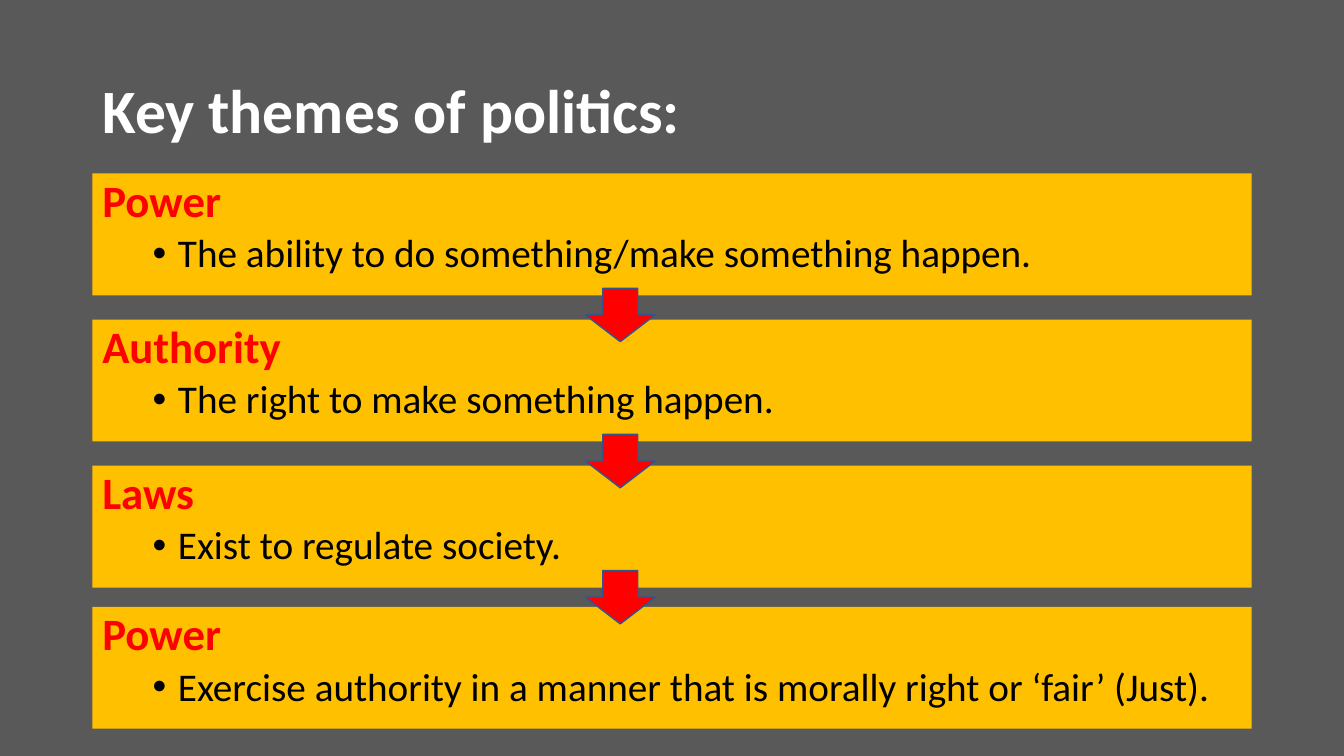
from dataclasses import dataclass

from lxml.etree import SubElement
from pptx import Presentation
from pptx.dml.color import RGBColor
from pptx.enum.shapes import MSO_SHAPE
from pptx.enum.text import MSO_ANCHOR, MSO_AUTO_SIZE, PP_ALIGN
from pptx.oxml.ns import qn
from pptx.shapes.autoshape import Shape
from pptx.slide import Slide
from pptx.text.text import TextFrame
from pptx.util import Inches, Pt

GREY = RGBColor(0x59, 0x59, 0x59)
GOLD = RGBColor(0xFF, 0xC0, 0x00)
RED = RGBColor(0xFF, 0x00, 0x00)
BLUE = RGBColor(0x32, 0x54, 0x91)
WHITE = RGBColor(0xFF, 0xFF, 0xFF)
BLACK = RGBColor(0x00, 0x00, 0x00)

FONT = "Calibri"
PAGE_WIDTH = Inches(13.33)
PAGE_HEIGHT = Inches(7.5)
COLUMN = PAGE_WIDTH / 160
ROW = PAGE_HEIGHT / 150


@dataclass(frozen=True)
class Area:
    """A rectangle in grid columns and rows."""
    left: float
    top: float
    width: float
    height: float

    def lengths(self) -> tuple[int, int, int, int]:
        return (round(self.left * COLUMN), round(self.top * ROW),
                round(self.width * COLUMN), round(self.height * ROW))


@dataclass(frozen=True)
class Theme:
    name: str
    meaning: str
    top: float


TITLE_AREA = Area(11, 8, 138, 29)
THEMES = (
    Theme("Power", "The ability to do something/make something happen.", 34.4),
    Theme("Authority", "The right to make something happen.", 63.4),
    Theme("Laws", "Exist to regulate society.", 92.4),
    Theme("Power", "Exercise authority in a manner that is morally right "
          "or ‘fair’ (Just).", 120.4),
)
ARROW_TOPS = (57.2, 86.2, 113.2)


def write_paragraph(frame: TextFrame, text: str, *, size: float,
                    color: RGBColor, bold: bool = False, before: float = 0,
                    bullet: bool = False) -> None:
    """Fill the frame's empty first paragraph, or add one after its text."""
    para = frame.add_paragraph() if frame.text else frame.paragraphs[0]
    para.alignment = PP_ALIGN.LEFT
    para.line_spacing = 0.9
    para.space_before = Pt(before)
    if bullet:
        para.level = 1
        properties = para._p.get_or_add_pPr()
        properties.set("marL", str(Inches(0.75)))
        properties.set("indent", str(Inches(-0.25)))
        SubElement(properties, qn("a:buFont"), typeface="Arial")
        SubElement(properties, qn("a:buChar"), char="•")
    span = para.add_run()
    span.text = text
    span.font.name = FONT
    span.font.size = Pt(size)
    span.font.bold = bold
    span.font.color.rgb = color


def add_filled_shape(page: Slide, kind: MSO_SHAPE, area: Area,
                     fill: RGBColor) -> Shape:
    shape = page.shapes.add_shape(kind, *area.lengths())
    shape.shadow.inherit = False
    shape.fill.solid()
    shape.fill.fore_color.rgb = fill
    shape.line.fill.background()
    return shape


def format_title(page: Slide, text: str) -> None:
    title = page.shapes.title
    title.left, title.top, title.width, title.height = TITLE_AREA.lengths()
    frame = title.text_frame
    frame.word_wrap = True
    frame.auto_size = MSO_AUTO_SIZE.NONE
    frame.vertical_anchor = MSO_ANCHOR.MIDDLE
    write_paragraph(frame, text, size=44, color=WHITE, bold=True)


def add_theme(page: Slide, theme: Theme) -> None:
    box = add_filled_shape(page, MSO_SHAPE.RECTANGLE,
                           Area(11, theme.top, 138, 24.2), GOLD)
    frame = box.text_frame
    frame.word_wrap = True
    frame.vertical_anchor = MSO_ANCHOR.TOP
    write_paragraph(frame, theme.name, size=32, color=RED, bold=True, before=10)
    write_paragraph(frame, theme.meaning, size=28, color=BLACK, before=5,
                    bullet=True)


def add_arrow(page: Slide, top: float) -> None:
    arrow = add_filled_shape(page, MSO_SHAPE.DOWN_ARROW,
                             Area(69.7, top, 8.3, 10.6), RED)
    arrow.line.color.rgb = BLUE
    arrow.line.width = Pt(1)


def main() -> None:
    deck = Presentation()
    deck.slide_width = PAGE_WIDTH
    deck.slide_height = PAGE_HEIGHT
    page = deck.slides.add_slide(deck.slide_layouts.get_by_name("Title Only"))
    page.background.fill.solid()
    page.background.fill.fore_color.rgb = GREY
    format_title(page, "Key themes of politics:")
    for theme in THEMES:
        add_theme(page, theme)
    for top in ARROW_TOPS:
        add_arrow(page, top)
    deck.save("out.pptx")


if __name__ == "__main__":
    main()
